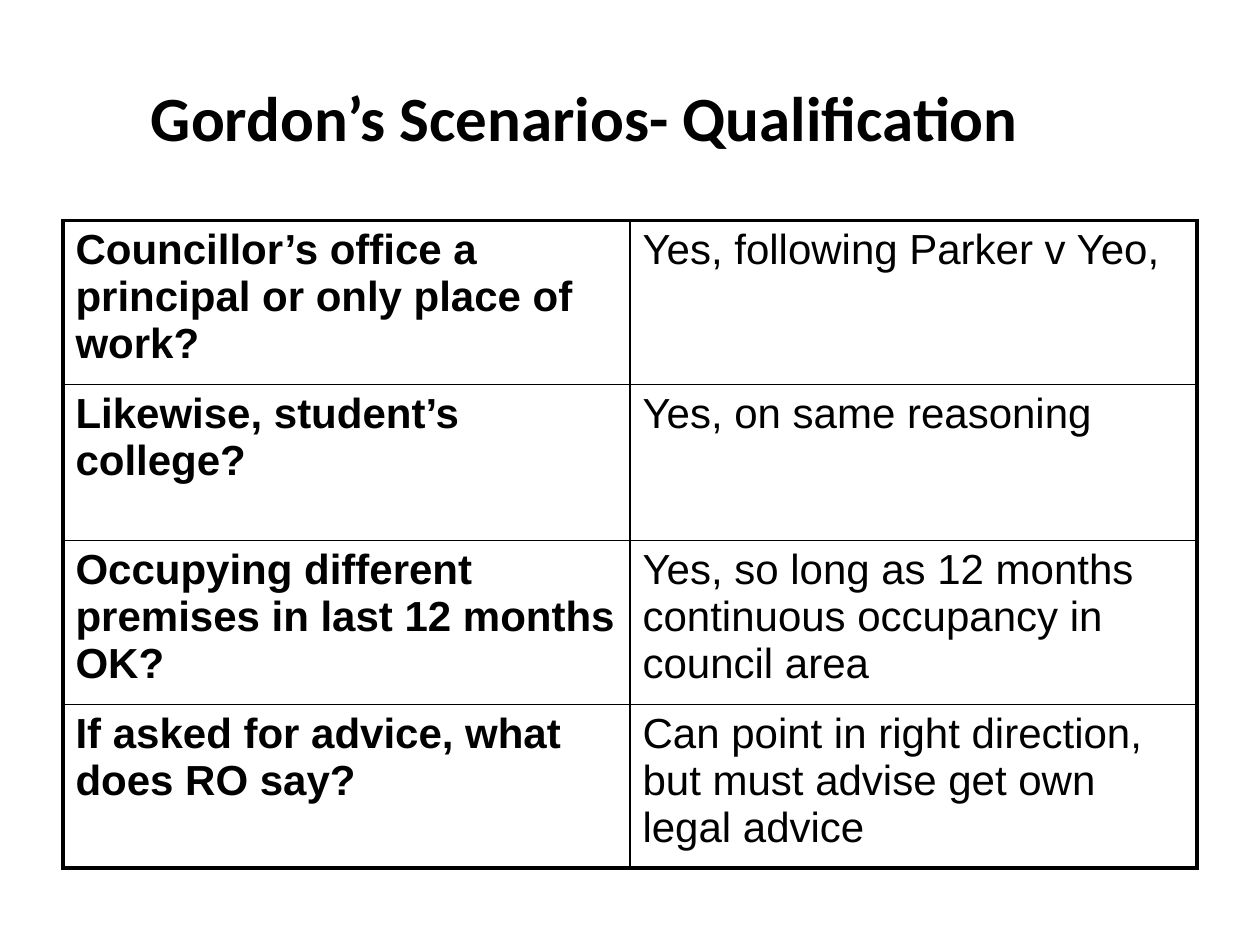
from dataclasses import dataclass

from lxml.etree import SubElement
from pptx import Presentation
from pptx.dml.color import RGBColor
from pptx.enum.text import MSO_ANCHOR, PP_ALIGN
from pptx.oxml.ns import qn
from pptx.util import Inches, Pt


@dataclass(frozen=True)
class Theme:
    ink: str = "000000"
    title_font: str = "Calibri"
    body_font: str = "Arial"
    title_size: float = 36
    body_size: float = 24
    outer_line: float = 2.25
    inner_line: float = 1


class SlideBuilder:
    def __init__(self, presentation, theme):
        self.presentation = presentation
        self.theme = theme
        self.slide = presentation.slides.add_slide(presentation.slide_layouts[5])

    def box(self, left, top, width, height):
        """Turn shares of the slide's size into lengths."""
        across, down = self.presentation.slide_width, self.presentation.slide_height
        return [round(share * full) for share, full in
                zip((left, top, width, height), (across, down, across, down))]

    def style(self, paragraph, font_name, size, bold):
        for run in paragraph.runs:
            run.font.name = font_name
            run.font.size = Pt(size)
            run.font.bold = bold
            run.font.color.rgb = RGBColor.from_string(self.theme.ink)

    def title(self, text, area):
        shape = self.slide.shapes.title
        shape.left, shape.top, shape.width, shape.height = self.box(*area)
        text_frame = shape.text_frame
        text_frame.text = text
        text_frame.vertical_anchor = MSO_ANCHOR.MIDDLE
        paragraph = text_frame.paragraphs[0]
        paragraph.alignment = PP_ALIGN.CENTER
        self.style(paragraph, self.theme.title_font, self.theme.title_size, True)

    def border(self, cell, outer_sides):
        properties = cell._tc.get_or_add_tcPr()
        for side in ("L", "R", "T", "B"):
            width = self.theme.outer_line if side in outer_sides else self.theme.inner_line
            line = SubElement(properties, qn(f"a:ln{side}"), w=str(Pt(width)))
            fill = SubElement(line, qn("a:solidFill"))
            SubElement(fill, qn("a:srgbClr"), val=self.theme.ink)

    def table(self, rows, row_heights, area):
        last_row, last_column = len(rows) - 1, len(rows[0]) - 1
        frame = self.slide.shapes.add_table(len(rows), len(rows[0]), *self.box(*area))
        table = frame.table
        table.first_row = table.horz_banding = False
        for row, height in zip(table.rows, row_heights):
            row.height = Inches(height)
        for row_index, texts in enumerate(rows):
            for column_index, text in enumerate(texts):
                cell = table.cell(row_index, column_index)
                cell.text_frame.text = text
                self.style(cell.text_frame.paragraphs[0], self.theme.body_font,
                           self.theme.body_size, column_index == 0)
                edges = {"L": column_index == 0, "R": column_index == last_column,
                         "T": row_index == 0, "B": row_index == last_row}
                # Borders come before the fill in the cell's properties
                self.border(cell, [side for side, outer in edges.items() if outer])
                cell.fill.background()


SCENARIOS = [
    ("Councillor’s office a principal or only place of work?",
     "Yes, following Parker v Yeo,"),
    ("Likewise, student’s college?",
     "Yes, on same reasoning"),
    ("Occupying different premises in last 12 months OK?",
     "Yes, so long as 12 months continuous occupancy in council area"),
    ("If asked for advice, what does RO say?",
     "Can point in right direction, but must advise get own legal advice"),
]
ROW_HEIGHTS = [1.3, 1.24, 1.3, 1.3]


def main():
    presentation = Presentation()
    presentation.slide_width, presentation.slide_height = Inches(10), Inches(7.5)
    builder = SlideBuilder(presentation, Theme())

    # Heading
    builder.title("Gordon’s Scenarios- Qualification", (0.05, 0.04, 0.828, 1 / 6))

    # Questions and answers
    builder.table(SCENARIOS, ROW_HEIGHTS, (0.05, 1.75 / 7.5, 0.9, sum(ROW_HEIGHTS) / 7.5))

    presentation.save("out.pptx")


if __name__ == "__main__":
    main()
